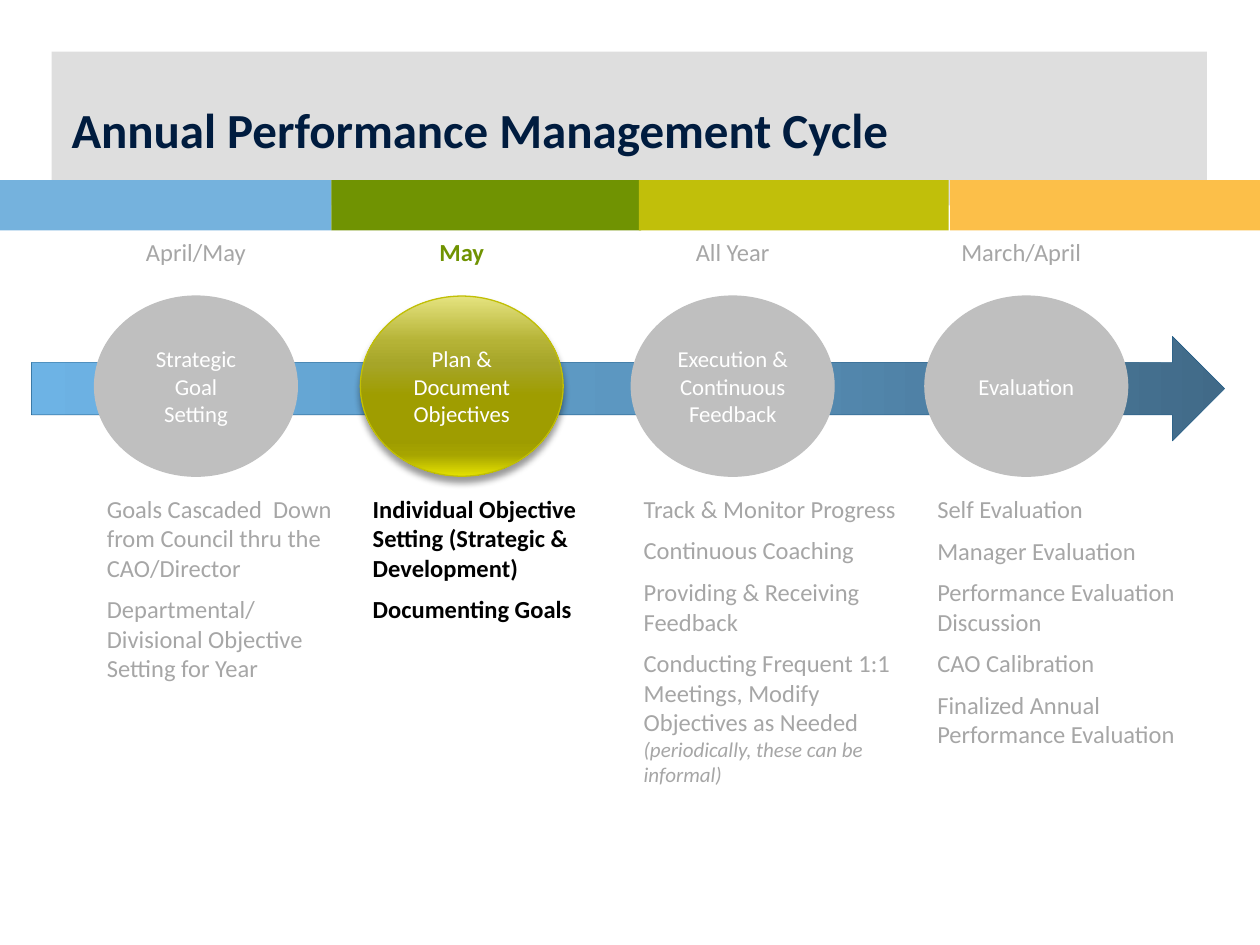
from lxml import etree
from pptx import Presentation
from pptx.dml.color import RGBColor
from pptx.enum import shapes, text
from pptx.oxml import ns
from pptx.util import Inches, Pt

COLORS = {
    "panel": "DEDEDE", "navy": "001C3F", "sky": "75B2DD", "green": "709302",
    "lime": "C1BF0A", "orange": "FCBF49", "arrow_line": "215D88",
    "disc": "BFBFBF", "active_line": "C1BF05", "muted": "A6A6A6",
    "white": "FFFFFF", "black": "000000",
}
ARROW_STOPS = [(0, "416A88"), (50, "5C97C1"), (100, "6DB3E5")]
ACTIVE_STOPS = [(0, "E5E37F"), (25, "B5B336"), (38, "A6A528"), (55, "9F9D00"),
                (80, "9E9C00"), (88, "A6A400"), (100, "E5E200")]
BANDS = [("sky", 0, 2.63), ("green", 2.63, 2.46),
         ("lime", 5.07, 2.46), ("orange", 7.54, 2.46)]
ASIDE = "(periodically, these can be informal)"
STAGES = [
    dict(left=0.75, width=2.13, height=1.63, month="April/May",
         name=["Strategic Goal", "Setting"],
         steps=["Goals Cascaded  Down from Council thru the CAO/Director",
                "Departmental/ Divisional Objective Setting for Year"]),
    dict(left=2.86, width=2.17, height=1.16, month="May", active=True,
         name=["Plan & Document Objectives"],
         steps=["Individual Objective Setting (Strategic & Development)",
                "Documenting Goals"]),
    dict(left=5.01, width=2.35, height=2.86, month="All Year",
         name=["Execution & Continuous Feedback"],
         steps=["Track & Monitor Progress", "Continuous Coaching",
                "Providing & Receiving Feedback",
                "Conducting Frequent 1:1 Meetings, Modify Objectives as Needed "],
         aside=ASIDE),
    dict(left=7.34, width=2.49, height=2.22, month="March/April", month_shift=-0.04,
         name=["Evaluation"],
         steps=["Self Evaluation", "Manager Evaluation",
                "Performance Evaluation Discussion", "CAO Calibration",
                "Finalized Annual Performance Evaluation"]),
]


def rgb(name):
    return RGBColor.from_string(COLORS[name])


def add_shape(s, kind, x, y, w, h, fill=None, line=None, line_width=0.75):
    sp = s.shapes.add_shape(kind, Inches(x), Inches(y), Inches(w), Inches(h))
    sp.shadow.inherit = False
    if fill:
        sp.fill.solid()
        sp.fill.fore_color.rgb = rgb(fill)
    if line:
        sp.line.color.rgb = rgb(line)
        sp.line.width = Pt(line_width)
    else:
        sp.line.fill.background()
    return sp


def set_gradient(sp, stops, angle):
    sp.fill.gradient()
    sp.fill.gradient_angle = angle
    gs_list = sp.fill._xPr.find(".//" + ns.qn("a:gsLst"))
    for gs in list(gs_list):
        gs_list.remove(gs)
    for pos, color in stops:
        gs = etree.SubElement(gs_list, ns.qn("a:gs"), pos=str(pos * 1000))
        etree.SubElement(gs, ns.qn("a:srgbClr"), val=color)


def add_shadow(sp):
    effects = sp._element.spPr.find(ns.qn("a:effectLst"))
    shadow = etree.SubElement(effects, ns.qn("a:outerShdw"), blurRad=str(Pt(4)),
                              dist=str(Pt(3)), dir="5400000", rotWithShape="0")
    color = etree.SubElement(shadow, ns.qn("a:srgbClr"), val=COLORS["black"])
    etree.SubElement(color, ns.qn("a:alpha"), val="40000")


def write(sp, lines, size, color, bold=False, align=None, gap=0,
          anchor=text.MSO_ANCHOR.TOP):
    tf = sp.text_frame
    tf.word_wrap = True
    tf.vertical_anchor = anchor
    for i, line in enumerate(lines):
        p = tf.paragraphs[0] if i == 0 else tf.add_paragraph()
        p.add_run().text = line
        p.alignment = align
        if i and gap:
            p.space_before = Pt(gap)
        p.font.name = "Calibri"
        p.font.size = Pt(size)
        p.font.bold = bold
        p.font.color.rgb = rgb(color)
    return tf


def add_text(s, x, y, w, h, lines, size, color, **style):
    sp = s.shapes.add_textbox(Inches(x), Inches(y), Inches(w), Inches(h))
    return write(sp, lines, size, color, **style)


def add_header(s, x, y, w, h):
    rect = shapes.MSO_SHAPE.RECTANGLE
    add_shape(s, rect, x + 0.41, y, w - 0.83, h, "panel")
    for color, left, width in BANDS:
        add_shape(s, rect, x + left, y + 1.02, width, 0.4, color)
    add_text(s, x + 0.47, y + 0.04, w - 0.47, 1.14,
             ["Annual Performance Management Cycle"], 28, "navy", bold=True,
             anchor=text.MSO_ANCHOR.MIDDLE)


def add_timeline(s, x, y, w, h):
    sp = add_shape(s, shapes.MSO_SHAPE.RIGHT_ARROW, x, y, w, h,
                   line="arrow_line", line_width=0.25)
    set_gradient(sp, ARROW_STOPS, 180)


def add_stage(s, stage, x, y, w, h):
    active = stage.get("active", False)
    center = text.PP_ALIGN.CENTER
    add_text(s, x + stage.get("month_shift", 0), y, 1.61, 0.34, [stage["month"]], 14,
             "green" if active else "muted", bold=active, align=center)
    disc = add_shape(s, shapes.MSO_SHAPE.OVAL, x, y + 0.52, 1.61, 1.43,
                     "disc", "active_line" if active else "disc")
    if active:
        set_gradient(disc, ACTIVE_STOPS, 270)
        add_shadow(disc)
    write(disc, stage["name"], 13, "white", align=center,
          anchor=text.MSO_ANCHOR.MIDDLE)
    tf = add_text(s, x, y + 2.04, w, h, stage["steps"], 14,
                  "black" if active else "muted", bold=active, gap=7)
    if "aside" in stage:
        r = tf.paragraphs[-1].add_run()
        r.text = stage["aside"]
        r.font.size = Pt(12)
        r.font.italic = True


def main():
    prs = Presentation()
    prs.slide_width, prs.slide_height = Inches(10), Inches(7.5)
    s = prs.slides.add_slide(prs.slide_layouts[6])
    add_header(s, 0, 0.41, 10, 1.22)
    add_timeline(s, 0.25, 2.67, 9.47, 0.83)
    for stage in STAGES:
        add_stage(s, stage, stage["left"], 1.83, stage["width"], stage["height"])
    prs.save("out.pptx")


if __name__ == "__main__":
    main()
